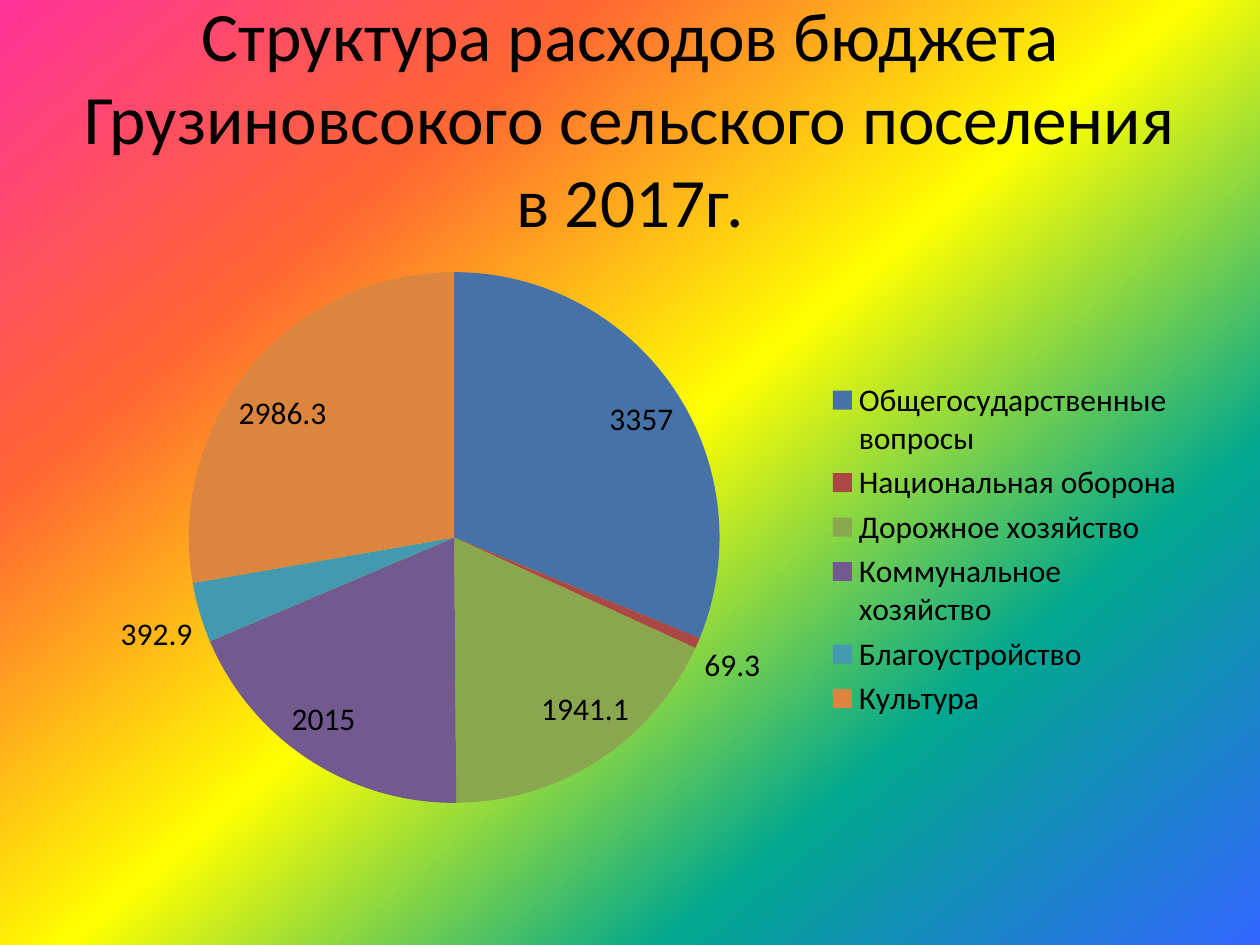
from dataclasses import dataclass

from lxml import etree
from pptx import Presentation
from pptx import util as u
from pptx.chart import data
from pptx.dml.color import RGBColor
from pptx.enum import chart as ch, text
from pptx.oxml import ns


@dataclass(frozen=True)
class Theme:
    font: str = "Calibri"
    ink: str = "000000"
    title_size: float = 39.6
    chart_size: float = 18
    background: tuple = ("FF3399", "FF6633", "FFFF00", "01A78F", "3366FF")
    angle: int = 50
    slices: tuple = ("4672A8", "AB4744", "8AA64F", "725990", "4299B0", "DC853E")


THEME = Theme()
TITLE = "Структура расходов бюджета Грузиновсокого сельского поселения в 2017г."
EXPENSES = {
    "Общегосударственные вопросы": 3357,
    "Национальная оборона": 69.3,
    "Дорожное хозяйство": 1941.1,
    "Коммунальное хозяйство": 2015,
    "Благоустройство": 392.9,
    "Культура": 2986.3,
}


def set_all(obj, values):
    for name, value in values.items():
        setattr(obj, name, value)


def set_font(font, size):
    set_all(font, {"name": THEME.font, "size": u.Pt(size), "bold": False})
    font.color.rgb = RGBColor.from_string(THEME.ink)


def paint_background(s):
    fill = s.background.fill
    fill.gradient()
    fill.gradient_angle = 360 - THEME.angle  # counted anticlockwise
    # Evenly spaced rainbow stops
    stops = s.element.find(".//" + ns.qn("a:gsLst"))
    for stop in list(stops):
        stops.remove(stop)
    step = 100000 // (len(THEME.background) - 1)
    for i, colour in enumerate(THEME.background):
        stop = etree.SubElement(stops, ns.qn("a:gs"), pos=str(i * step))
        etree.SubElement(stop, ns.qn("a:srgbClr"), val=colour)


def add_title(s, box):
    sp = s.shapes.title
    set_all(sp, dict(zip(("left", "top", "width", "height"), box)))
    tf = sp.text_frame
    set_all(tf, {"text": TITLE, "word_wrap": True,
                 "auto_size": text.MSO_AUTO_SIZE.NONE,
                 "vertical_anchor": text.MSO_ANCHOR.MIDDLE})
    p = tf.paragraphs[0]
    p.alignment = text.PP_ALIGN.CENTER
    set_font(p.runs[0].font, THEME.title_size)


def place_plot(chart, **fractions):
    """Fix the inner plot area as fractions of the chart box."""
    area = chart.element.find(".//" + ns.qn("c:plotArea"))
    layout = area.find(ns.qn("c:layout"))
    if layout is None:
        layout = etree.Element(ns.qn("c:layout"))
        area.insert(0, layout)
    manual = etree.SubElement(layout, ns.qn("c:manualLayout"))
    settings = {"layoutTarget": "inner", "xMode": "edge", "yMode": "edge", **fractions}
    for name, value in settings.items():
        etree.SubElement(manual, ns.qn("c:" + name), val=str(value))


def add_expense_pie(s, box):
    cd = data.CategoryChartData()
    cd.categories = list(EXPENSES)
    cd.add_series("Расходы", list(EXPENSES.values()))
    chart = s.shapes.add_chart(ch.XL_CHART_TYPE.PIE, *box, cd).chart
    set_all(chart, {"has_title": False, "has_legend": True})
    set_font(chart.font, THEME.chart_size)
    set_all(chart.legend, {"position": ch.XL_LEGEND_POSITION.RIGHT,
                           "include_in_layout": False})
    place_plot(chart, x=0.11, y=0.03, w=0.47, h=0.9)

    # Slices and their values
    plot = chart.plots[0]
    set_all(plot, {"vary_by_categories": True, "has_data_labels": True})
    set_all(plot.data_labels, {"show_value": True, "show_percentage": False,
                               "position": ch.XL_LABEL_POSITION.BEST_FIT})
    set_font(plot.data_labels.font, THEME.chart_size)
    for i, colour in enumerate(THEME.slices):
        fill = plot.series[0].points[i].format.fill
        fill.solid()
        fill.fore_color.rgb = RGBColor.from_string(colour)


def main():
    prs = Presentation()
    set_all(prs, {"slide_width": u.Cm(25.4), "slide_height": u.Cm(19.05)})
    s = prs.slides.add_slide(prs.slide_layouts[5])
    margin = u.Cm(1.27)
    width = prs.slide_width - 2 * margin
    paint_background(s)
    add_title(s, (margin, u.Cm(0.76), width, u.Cm(3.18)))
    add_expense_pie(s, (margin, u.Cm(5.13), width, u.Cm(11.89)))
    prs.save("out.pptx")


if __name__ == "__main__":
    main()
